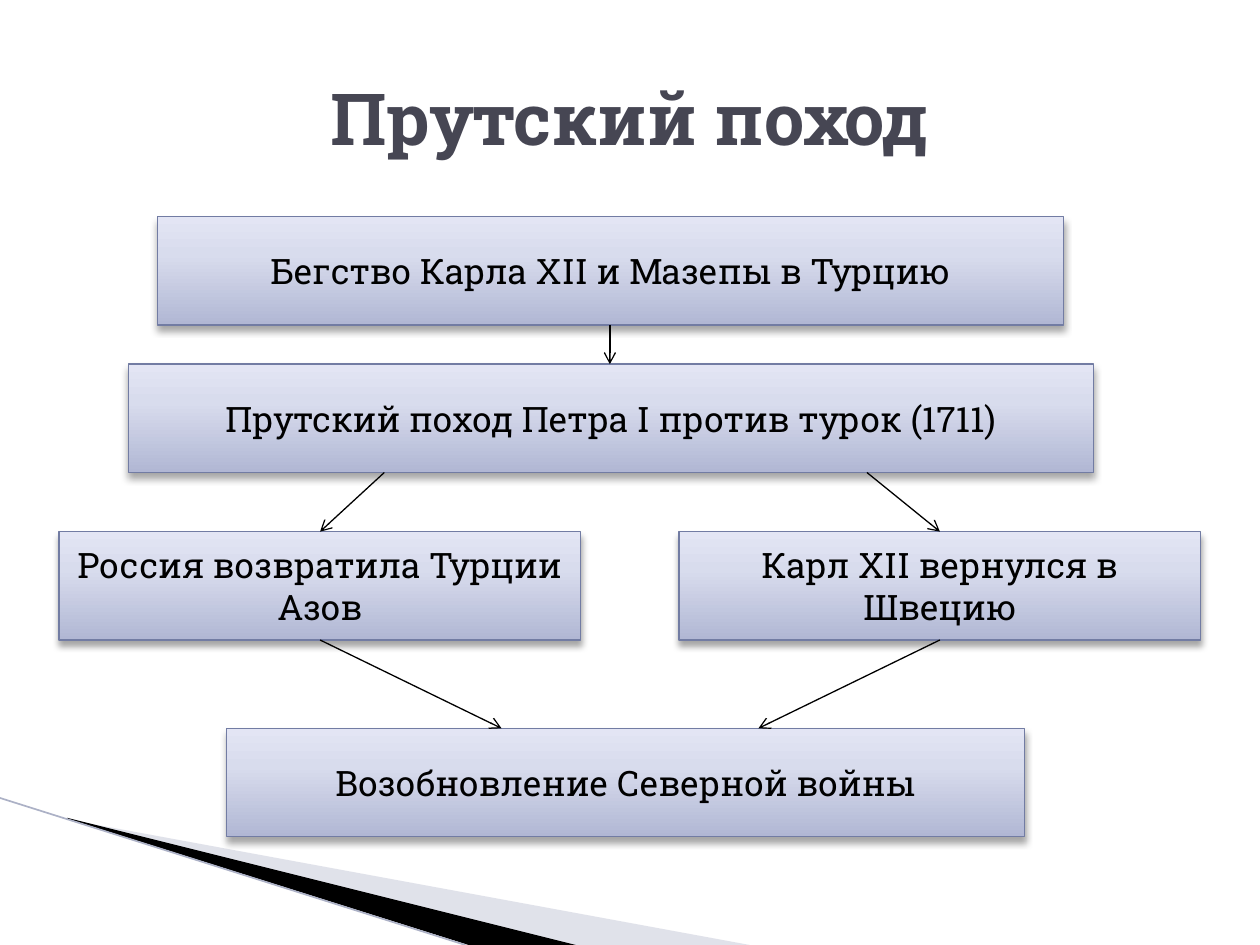
"""Build a flow chart slide on the Prut campaign."""
import pptx
import pptx.util
import pptx.oxml
import pptx.oxml.ns
import pptx.dml.color
import pptx.enum.text
import pptx.enum.shapes

Pt = pptx.util.Pt
qn = pptx.oxml.ns.qn
NS = pptx.oxml.ns.nsdecls("a")

HUES = {
    "title": "464653", "text": "000000", "edge": "727CA3", "arrow": "000000",
    "pale": "B3B7CB", "dark": "000000", "trim": "ACB1C6", "shade": "000000",
    "low": "B1B7D4", "mid": "D8DCED", "high": "E3E5F4",
}
STOPS = [("low", 0), ("mid", 65), ("high", 100)]
TITLE = ("Прутский поход", (36, 21.6, 648, 90), {"size": Pt(41), "bold": True})
TALL = 61.9
ROWS = {"flight": 123.8, "march": 208.1, "split": 303.8, "war": 416.2}
BOXES = [
    ("flight", 90, 517.7, "Бегство Карла XII и Мазепы в Турцию"),
    ("march", 73.4, 551.5, "Прутский поход Петра I против турок (1711)"),
    ("war", 129.6, 455.8, "Возобновление Северной войны"),
    ("split", 33.8, 298.1, "Россия возвратила Турции Азов"),
    ("split", 388.1, 298.1, "Карл XII вернулся в Швецию"),
]
ARROWS = [
    ("flight", 348.5, "march", 348.5),
    ("march", 219.6, "split", 182.9),
    ("march", 495.4, "split", 537.1),
    ("split", 182.9, "war", 286.6),
    ("split", 537.1, "war", 433.4),
]
WEDGES = [
    ("pale", 40, [(39.6, 468.5), (428.4, 540), (328.3, 540), (39.6, 468)]),
    ("dark", 100, [(38.2, 467.3), (329, 540), (267.8, 540), (38.9, 468)]),
]
TRIM = (0, 456, 266, 540)


def hue(name):
    return pptx.dml.color.RGBColor.from_string(HUES[name])


def apply(item, form):
    for key, value in form.items():
        setattr(item, key, value)


def write(shape, text, tint, form):
    frame = shape.text_frame
    apply(frame, {"word_wrap": True,
                  "vertical_anchor": pptx.enum.text.MSO_ANCHOR.MIDDLE})
    para = frame.paragraphs[0]
    para.alignment = pptx.enum.text.PP_ALIGN.CENTER
    run = para.add_run()
    run.text = text
    apply(run.font, {"name": "Roboto Slab", **form})
    run.font.color.rgb = hue(tint)


def wedge(slide, tint, alpha, spots):
    start, *rest = [(Pt(x), Pt(y)) for x, y in spots]
    pen = slide.shapes.build_freeform(*start)
    pen.add_line_segments(rest)
    shape = pen.convert_to_shape()
    shape.shadow.inherit = False
    shape.line.fill.background()
    shape.fill.solid()
    shape.fill.fore_color.rgb = hue(tint)
    if alpha < 100:
        color = shape.element.spPr.find(qn("a:solidFill"))[0]
        color.append(pptx.oxml.parse_xml(f'<a:alpha {NS} val="{alpha * 1000}"/>'))


def line(slide, ends, tint, width, tip=False):
    link = slide.shapes.add_connector(
        pptx.enum.shapes.MSO_CONNECTOR.STRAIGHT, *map(Pt, ends))
    link.line.color.rgb = hue(tint)
    link.line.width = Pt(width)
    if tip:
        link.line._get_or_add_ln().append(
            pptx.oxml.parse_xml(f'<a:tailEnd {NS} type="arrow"/>'))
    link.element.spPr.append(pptx.oxml.parse_xml(f"<a:effectLst {NS}/>"))


def box(slide, row, left, width, text):
    shape = slide.shapes.add_shape(
        pptx.enum.shapes.MSO_SHAPE.RECTANGLE,
        *map(Pt, (left, ROWS[row], width, TALL)))
    shape.fill.gradient()
    shape.fill.gradient_angle = 90
    stops = shape.element.spPr.find(qn("a:gradFill")).find(qn("a:gsLst"))
    for stop in list(stops):
        stops.remove(stop)
    for tint, place in STOPS:
        stops.append(pptx.oxml.parse_xml(
            f'<a:gs {NS} pos="{place * 1000}"><a:srgbClr val="{HUES[tint]}"/></a:gs>'))
    shape.line.color.rgb = hue("edge")
    shape.line.width = Pt(0.75)
    shape.shadow.inherit = False
    shape.element.spPr.find(qn("a:effectLst")).append(pptx.oxml.parse_xml(
        f'<a:outerShdw {NS} blurRad="{Pt(4)}" dist="{Pt(3)}" dir="5400000" '
        f'rotWithShape="0"><a:srgbClr val="{HUES["shade"]}">'
        '<a:alpha val="35000"/></a:srgbClr></a:outerShdw>'))
    write(shape, text, "text", {"size": Pt(20)})


def main():
    deck = pptx.Presentation()
    apply(deck, {"slide_width": Pt(720), "slide_height": Pt(540)})
    slide = deck.slides.add_slide(deck.slide_layouts[6])
    for item in WEDGES:
        wedge(slide, *item)
    line(slide, TRIM, "trim", 0.95)
    text, area, form = TITLE
    write(slide.shapes.add_textbox(*map(Pt, area)), text, "title", form)
    for item in BOXES:
        box(slide, *item)
    for head, left, foot, right in ARROWS:
        ends = (left, ROWS[head] + TALL, right, ROWS[foot])
        line(slide, ends, "arrow", 0.75, tip=True)
    deck.save("out.pptx")


if __name__ == "__main__":
    main()
